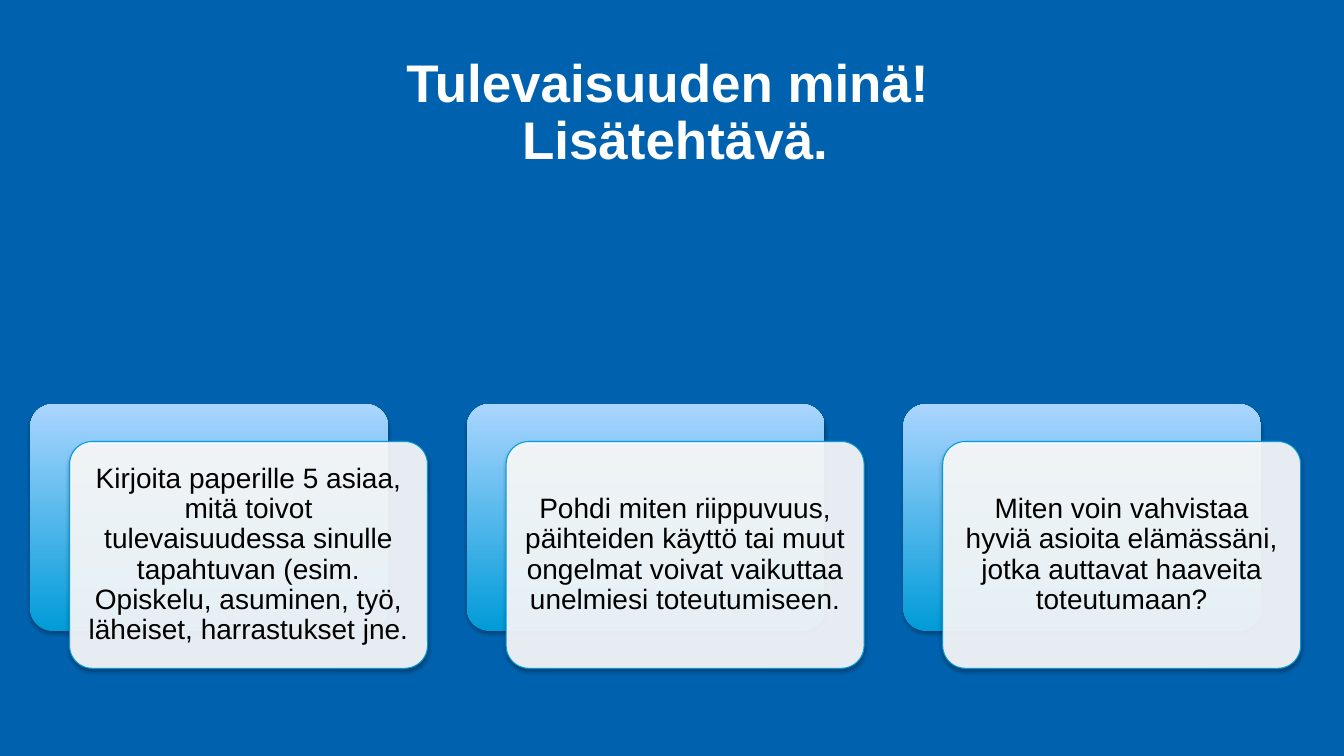
from copy import deepcopy

from lxml.etree import SubElement
from pptx import Presentation
from pptx.dml.color import RGBColor
from pptx.enum.shapes import MSO_SHAPE
from pptx.enum.text import MSO_ANCHOR, MSO_AUTO_SIZE, PP_ALIGN
from pptx.oxml.ns import qn
from pptx.util import Inches, Pt

TITLE_LINES = ["Tulevaisuuden minä! ", "Lisätehtävä."]
TASKS = [
    "Kirjoita paperille 5 asiaa, mitä toivot tulevaisuudessa sinulle tapahtuvan "
    "(esim. Opiskelu, asuminen, työ, läheiset, harrastukset jne. ",
    "Pohdi miten riippuvuus, päihteiden käyttö tai muut ongelmat voivat vaikuttaa "
    "unelmiesi toteutumiseen.",
    "Miten voin vahvistaa hyviä asioita elämässäni, jotka auttavat haaveita "
    "toteutumaan?",
]

BLUE = RGBColor(0x00, 0x62, 0xAE)
CYAN = RGBColor(0x00, 0x9B, 0xD8)
LIGHT_BLUE = RGBColor(0xAA, 0xD5, 0xFF)
WHITE = RGBColor(0xFF, 0xFF, 0xFF)
BLACK = RGBColor(0x00, 0x00, 0x00)

FIRST_LEFT, FIRST_TOP = 0.3, 4.01
CARD_WIDTH, CARD_HEIGHT = 3.55, 2.25
CARD_STEP = 4.33
OFFSET_X, OFFSET_Y = 0.39, 0.37
TEXT_INSET = 0.07


def style_text(frame, paragraph, margin, anchor):
    """Apply the shared frame and paragraph settings."""
    frame.word_wrap = True
    frame.auto_size = MSO_AUTO_SIZE.NONE
    frame.vertical_anchor = anchor
    frame.margin_left = frame.margin_right = Inches(margin)
    frame.margin_top = frame.margin_bottom = Inches(margin)
    paragraph.alignment = PP_ALIGN.CENTER
    paragraph.line_spacing = 0.9


def add_run(paragraph, text, size, color, bold=False):
    """Add one formatted run and return it."""
    run = paragraph.add_run()
    run.text = text
    run.font.name = "Arial"
    run.font.size = Pt(size)
    run.font.bold = bold
    run.font.color.rgb = color
    return run


def add_card(slide, left, top):
    """Add a rounded card with a soft shadow below it."""
    card = slide.shapes.add_shape(
        MSO_SHAPE.ROUNDED_RECTANGLE, Inches(left), Inches(top),
        Inches(CARD_WIDTH), Inches(CARD_HEIGHT))
    card.adjustments[0] = 0.1
    card.shadow.inherit = False
    effects = card._element.spPr.find(qn("a:effectLst"))
    shadow = SubElement(
        effects, qn("a:outerShdw"), blurRad=str(Pt(3.1)), dist=str(Pt(1.8)),
        dir="5400000", rotWithShape="0")
    color = SubElement(shadow, qn("a:srgbClr"), val=str(BLACK))
    SubElement(color, qn("a:alpha"), val="35000")
    return card


def add_task(slide, index, text):
    """Add a gradient card, its white front card and the task text."""
    left = FIRST_LEFT + index * CARD_STEP
    back = add_card(slide, left, FIRST_TOP)
    back.fill.gradient()
    back.fill.gradient_angle = 90
    for stop, color in zip(back.fill.gradient_stops, (CYAN, LIGHT_BLUE)):
        stop.color.rgb = color
    back.line.fill.background()

    left, top = left + OFFSET_X, FIRST_TOP + OFFSET_Y
    front = add_card(slide, left, top)
    front.fill.solid()
    front.fill.fore_color.rgb = WHITE
    fill_color = front._element.spPr.find(qn("a:solidFill")).find(qn("a:srgbClr"))
    SubElement(fill_color, qn("a:alpha"), val="90000")
    front.line.color.rgb = CYAN
    front.line.width = Pt(0.75)

    box = slide.shapes.add_textbox(
        Inches(left + TEXT_INSET), Inches(top + TEXT_INSET),
        Inches(CARD_WIDTH - 2 * TEXT_INSET), Inches(CARD_HEIGHT - 2 * TEXT_INSET))
    paragraph = box.text_frame.paragraphs[0]
    style_text(box.text_frame, paragraph, 0.1, MSO_ANCHOR.MIDDLE)
    add_run(paragraph, text, 20, BLACK)


def add_title(slide):
    """Fill and place the title placeholder."""
    title = slide.shapes.title
    title.left, title.top = Inches(1.29), Inches(0.56)
    title.width, title.height = Inches(10.81), Inches(1.08)
    paragraph = title.text_frame.paragraphs[0]
    style_text(title.text_frame, paragraph, 0, MSO_ANCHOR.TOP)
    first = add_run(paragraph, TITLE_LINES[0], 37.8, WHITE, bold=True)
    paragraph.add_line_break()
    line_break = paragraph._p.find(qn("a:br"))
    line_break.append(deepcopy(first._r.rPr))
    add_run(paragraph, TITLE_LINES[1], 37.8, WHITE, bold=True)


def main():
    """Build and save the slide."""
    presentation = Presentation()
    presentation.slide_width = Inches(13.33)
    presentation.slide_height = Inches(7.5)
    slide = presentation.slides.add_slide(presentation.slide_layouts[5])
    slide.background.fill.solid()
    slide.background.fill.fore_color.rgb = BLUE
    add_title(slide)
    for index, text in enumerate(TASKS):
        add_task(slide, index, text)
    presentation.save("out.pptx")


if __name__ == "__main__":
    main()
